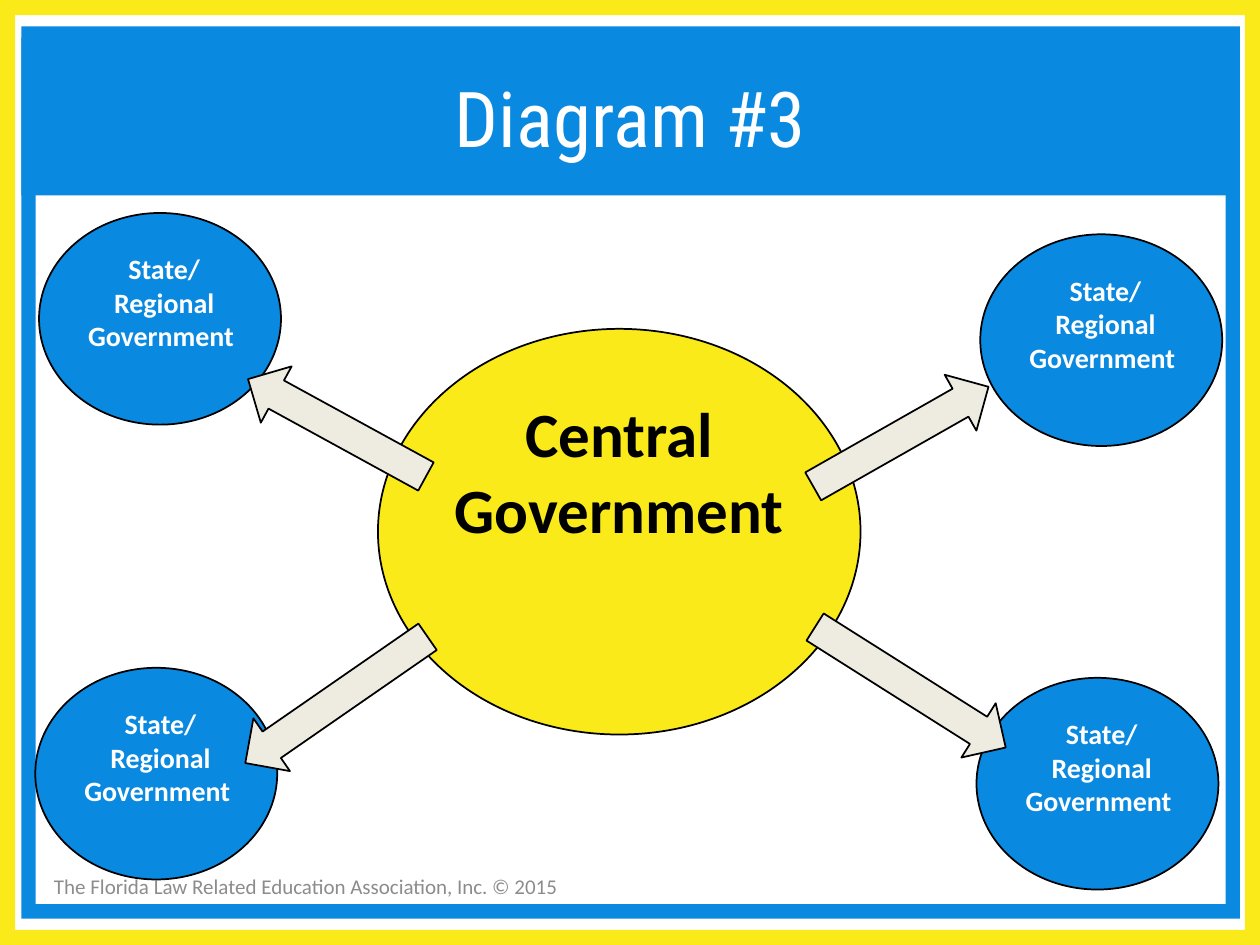
import pptx
import pptx.util
import pptx.dml.color
import pptx.enum.shapes
import pptx.enum.text

Pt = pptx.util.Pt
RGBColor = pptx.dml.color.RGBColor
SHAPE = pptx.enum.shapes.MSO_SHAPE
ANCHOR = pptx.enum.text.MSO_ANCHOR
ALIGN = pptx.enum.text.PP_ALIGN
FIT = pptx.enum.text.MSO_AUTO_SIZE

YELLOW = RGBColor(0xFA, 0xEA, 0x1A)
BLUE = RGBColor(0x0A, 0x89, 0xE0)
CREAM = RGBColor(0xEE, 0xEC, 0xE1)
GREY = RGBColor(0x8C, 0x8C, 0x8C)
WHITE = RGBColor(255, 255, 255)
BLACK = RGBColor(0, 0, 0)

# Content: lengths in points, boxes as left, top, width, height
TITLE = "Diagram #3"
FOOTER = "The Florida Law Related Education Association, Inc. © 2015"
CENTRAL = ["Central", "Government"]
REGIONAL = ["State/", "Regional Government "]

FRAMES = [((0, 0, 720, 540), YELLOW), ((12.24, 15.12, 696.24, 509.76), BLUE)]
TITLE_BOX = (12.24, 21.6, 696.24, 90)
FOOTER_BOX = (23.76, 491.76, 306, 28.8)
CENTRAL_BOX = (216, 187.92, 275.76, 231.84)

REGION_CORNERS = [(22.32, 121.68), (20.16, 381.6), (560.16, 133.92), (558, 387.36)]
REGION_SIZE = (138.24, 120.96)
LABEL_OFFSET = (8.5, 18.72)
LABEL_SIZE = (126, 47.52)

# Arrows: centre x, centre y, length, rotation
ARROWS = [
    (192.24, 399.96, 126.72, 145.3),
    (520.2, 392.76, 128.88, 32.3),
    (514.8, 249.48, 115.2, 330.4),
    (192.6, 244.44, 115.92, 208.7),
]
ARROW_HEIGHT = 36.72

TITLE_FONT = {"name": "Roboto Condensed", "size": Pt(44), "bold": False}
FOOTER_FONT = {"name": "Calibri", "size": Pt(12)}
CENTRAL_FONT = {"name": "Calibri", "size": Pt(36), "bold": True}
REGION_FONT = {"name": "Calibri", "size": Pt(16), "bold": True}


def points(box):
    return [Pt(value) for value in box]


def write(shape, lines, font, colour, align=ALIGN.CENTER, **frame_format):
    frame = shape.text_frame
    for name, value in frame_format.items():
        setattr(frame, name, value)
    frame.text = "\n".join(lines)
    for para in frame.paragraphs:
        para.alignment = align
        for span in para.runs:
            for name, value in font.items():
                setattr(span.font, name, value)
            span.font.color.rgb = colour


def draw(parent, kind, box, fill, outlined=True):
    shape = parent.add_shape(kind, *points(box))
    shape.shadow.inherit = False
    shape.fill.solid()
    shape.fill.fore_color.rgb = fill
    if outlined:
        shape.line.color.rgb = BLACK
        shape.line.width = Pt(1)
    else:
        shape.line.fill.background()
    return shape


deck = pptx.Presentation()
deck.slide_width, deck.slide_height = Pt(720), Pt(540)
page = deck.slides.add_slide(deck.slide_layouts[5])

# Footer and border frames
footer = page.shapes.add_textbox(*points(FOOTER_BOX))
write(footer, [FOOTER], FOOTER_FONT, GREY, ALIGN.LEFT,
      word_wrap=True, vertical_anchor=ANCHOR.MIDDLE)
for box, colour in FRAMES:
    border = draw(page.shapes, SHAPE.FRAME, box, colour, outlined=False)
    border.adjustments[0] = 0.016

# Title band
title = page.shapes.title
title.left, title.top, title.width, title.height = points(TITLE_BOX)
title.fill.solid()
title.fill.fore_color.rgb = BLUE
write(title, [TITLE], TITLE_FONT, WHITE,
      auto_size=FIT.NONE, vertical_anchor=ANCHOR.MIDDLE)

# Central government
central = draw(page.shapes, SHAPE.OVAL, CENTRAL_BOX, YELLOW)
write(central, CENTRAL, CENTRAL_FONT, BLACK,
      word_wrap=False, vertical_anchor=ANCHOR.TOP)

# State and regional governments
for left, top in REGION_CORNERS:
    region = page.shapes.add_group_shape().shapes
    draw(region, SHAPE.OVAL, (left, top, *REGION_SIZE), BLUE)
    corner = (left + LABEL_OFFSET[0], top + LABEL_OFFSET[1])
    label = region.add_textbox(*points(corner + LABEL_SIZE))
    write(label, REGIONAL, REGION_FONT, WHITE,
          word_wrap=True, auto_size=FIT.SHAPE_TO_FIT_TEXT)

# Arrows from the centre to the regions
for x, y, length, rotation in ARROWS:
    box = (x - length / 2, y - ARROW_HEIGHT / 2, length, ARROW_HEIGHT)
    arrow = draw(page.shapes, SHAPE.RIGHT_ARROW, box, CREAM)
    arrow.rotation = rotation

deck.save("out.pptx")
